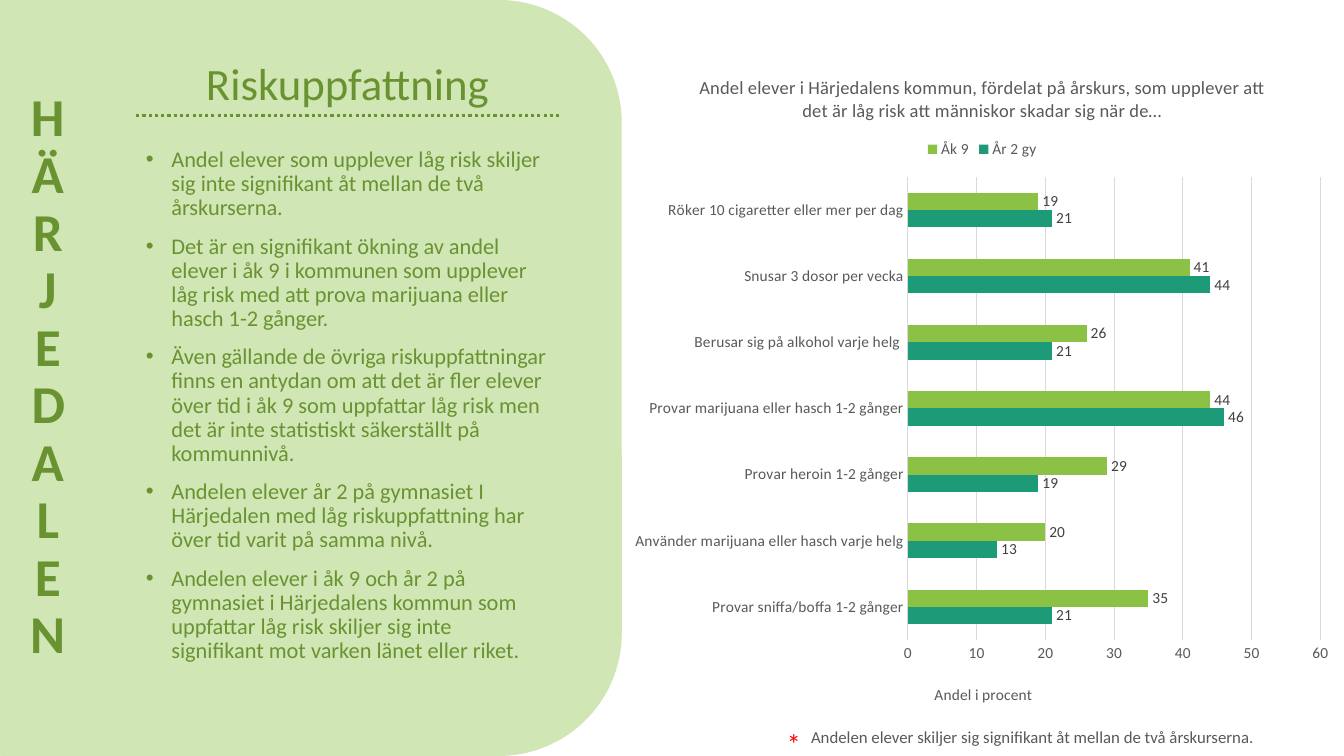
from lxml.etree import SubElement
from pptx import Presentation
from pptx.chart.data import CategoryChartData
from pptx.dml.color import RGBColor
from pptx.enum.chart import XL_CHART_TYPE, XL_LABEL_POSITION, XL_LEGEND_POSITION, XL_TICK_MARK
from pptx.enum.dml import MSO_LINE
from pptx.enum.shapes import MSO_CONNECTOR, MSO_SHAPE
from pptx.enum.text import MSO_ANCHOR, PP_ALIGN
from pptx.oxml.ns import qn
from pptx.util import Cm, Pt

COLORS = {
    "panel": "D1E6B5", "green": "699331", "lime": "8BC145", "teal": "1D9A78",
    "gray": "595959", "label": "404040", "grid": "D9D9D9", "red": "FF0000",
}
FONT = "Calibri"
POINTS = [
    "Andel elever som upplever låg risk skiljer sig inte signifikant åt mellan de två årskurserna.",
    "Det är en signifikant ökning av andel elever i åk 9 i kommunen som upplever låg risk med att "
    "prova marijuana eller hasch 1-2 gånger.",
    "Även gällande de övriga riskuppfattningar finns en antydan om att det är fler elever över tid "
    "i åk 9 som uppfattar låg risk men det är inte statistiskt säkerställt på kommunnivå.",
    "Andelen elever år 2 på gymnasiet I Härjedalen med låg riskuppfattning har över tid varit på "
    "samma nivå.",
    "Andelen elever i åk 9 och år 2 på gymnasiet i Härjedalens kommun som uppfattar låg risk "
    "skiljer sig inte signifikant mot varken länet eller riket.",
]
RISKS = [  # activity, År 2 gy, Åk 9
    ("Provar sniffa/boffa 1-2 gånger", 21, 35),
    ("Använder marijuana eller hasch varje helg", 13, 20),
    ("Provar heroin 1-2 gånger", 19, 29),
    ("Provar marijuana eller hasch 1-2 gånger", 46, 44),
    ("Berusar sig på alkohol varje helg ", 21, 26),
    ("Snusar 3 dosor per vecka", 44, 41),
    ("Röker 10 cigaretter eller mer per dag", 21, 19),
]


def style(font, size, color, bold=False):
    font.name, font.size, font.bold = FONT, Pt(size), bold
    font.color.rgb = RGBColor.from_string(COLORS[color])


def place(part, index, **fractions):
    """Give a chart part a manual layout in fractions of the chart area."""
    for old in part.findall(qn("c:layout")):
        part.remove(old)
    layout = part.makeelement(qn("c:layout"))
    part.insert(index, layout)
    manual = SubElement(layout, qn("c:manualLayout"))
    if "w" in fractions:
        SubElement(manual, qn("c:layoutTarget")).set("val", "inner")
    for mode in ("xMode", "yMode"):
        SubElement(manual, qn(f"c:{mode}")).set("val", "edge")
    for key, value in fractions.items():
        SubElement(manual, qn(f"c:{key}")).set("val", str(value))


prs = Presentation()
prs.slide_width, prs.slide_height = Cm(33.87), Cm(19.05)
s = prs.slides.add_slide(prs.slide_layouts[6])

# Green panel and dotted rule
sp = s.shapes.add_shape(MSO_SHAPE.ROUNDED_RECTANGLE, Cm(-2.9), Cm(0), Cm(18.57), Cm(19.05))
sp.shadow.inherit = False
sp.fill.solid()
sp.fill.fore_color.rgb = RGBColor.from_string(COLORS["panel"])
sp.line.fill.background()

rule = s.shapes.add_connector(MSO_CONNECTOR.STRAIGHT, Cm(3.43), Cm(2.9), Cm(14.12), Cm(2.9))
rule.line.color.rgb = RGBColor.from_string(COLORS["green"])
rule.line.width = Pt(2.25)
rule.line.dash_style = MSO_LINE.ROUND_DOT
SubElement(rule.element.spPr, qn("a:effectLst"))

# Chart
data = CategoryChartData(number_format="0")
names, year_2, grade_9 = zip(*RISKS)
data.categories = names
data.add_series("År 2 gy", year_2)
data.add_series("Åk 9", grade_9)
chart = s.shapes.add_chart(XL_CHART_TYPE.BAR_CLUSTERED, Cm(15.65), Cm(1.32),
                           Cm(18.21), Cm(16.87), data).chart
style(chart.font, 11, "gray")

title = chart.chart_title
title.text_frame.text = ("Andel elever i Härjedalens kommun, fördelat på årskurs, som upplever att "
                         "det är låg risk att människor skadar sig när de…")
style(title.text_frame.paragraphs[0].runs[0].font, 13.2, "gray")

chart.has_legend = True
chart.legend.position = XL_LEGEND_POSITION.TOP
chart.legend.include_in_layout = False
style(chart.legend.font, 11, "gray")

plot = chart.plots[0]
plot.gap_width, plot.overlap, plot.vary_by_categories = 182, 0, False
for series, color in zip(plot.series, ("teal", "lime")):
    series.format.fill.solid()
    series.format.fill.fore_color.rgb = RGBColor.from_string(COLORS[color])
    labels = series.data_labels
    labels.show_value = True
    labels.position = XL_LABEL_POSITION.OUTSIDE_END
    labels.number_format, labels.number_format_is_linked = "0", False
    style(labels.font, 11, "label")

values, categories = chart.value_axis, chart.category_axis
for axis in (values, categories):
    axis.major_tick_mark = axis.minor_tick_mark = XL_TICK_MARK.NONE
    style(axis.tick_labels.font, 11, "gray")
values.minimum_scale, values.maximum_scale, values.major_unit = 0, 60, 10
values.tick_labels.number_format = "0"
values.tick_labels.number_format_is_linked = False
values.format.line.fill.background()
for line in (values.major_gridlines.format.line, categories.format.line):
    line.color.rgb = RGBColor.from_string(COLORS["grid"])
    line.width = Pt(0.75)
values.axis_title.text_frame.text = "Andel i procent"
style(values.axis_title.text_frame.paragraphs[0].runs[0].font, 11, "gray")

place(chart.element.find(".//" + qn("c:plotArea")), 0, x=0.397, y=0.186, w=0.571, h=0.692)
place(values.axis_title.element, 1, x=0.43, y=0.94)

# Texts: content, box, size, colour, bold, alignment, anchor
TEXTS = [
    (["Riskuppfattning"], (3.25, 0.86, 11.02, 2.03), 32, "green", False,
     PP_ALIGN.CENTER, MSO_ANCHOR.BOTTOM),
    (POINTS, (3.43, 3.61, 10.64, 13.64), 16, "green", False, PP_ALIGN.LEFT, MSO_ANCHOR.TOP),
    (["HÄRJEDALEN"], (-0.13, -0.46, 2.67, 19.96), 38, "green", True,
     PP_ALIGN.CENTER, MSO_ANCHOR.BOTTOM),
    (["*"], (19.58, 18.19, 1.22, 1.75), 20, "red", False, PP_ALIGN.LEFT, MSO_ANCHOR.TOP),
    (["Andelen elever skiljer sig signifikant åt mellan de två årskurserna."],
     (20.19, 18.19, 11.96, 0.76), 12, "gray", False, PP_ALIGN.LEFT, MSO_ANCHOR.TOP),
]
for paragraphs, box, size, color, bold, align, anchor in TEXTS:
    sp = s.shapes.add_textbox(*map(Cm, box))
    tf = sp.text_frame
    tf.word_wrap, tf.vertical_anchor = True, anchor
    tf.text = "\n".join(paragraphs)
    for p in tf.paragraphs:
        p.alignment = align
        style(p.runs[0].font, size, color, bold)
        if color == "green":
            p.line_spacing = 0.9
        if paragraphs is POINTS:
            p.space_before = Pt(10)
            pPr = p._p.get_or_add_pPr()
            pPr.set("marL", str(Cm(0.64)))
            pPr.set("indent", str(Cm(-0.64)))
            SubElement(pPr, qn("a:buFont")).set("typeface", "Arial")
            SubElement(pPr, qn("a:buChar")).set("char", "•")
    if bold:
        tf._txBody.bodyPr.set("vert", "wordArtVert")

prs.save("out.pptx")
